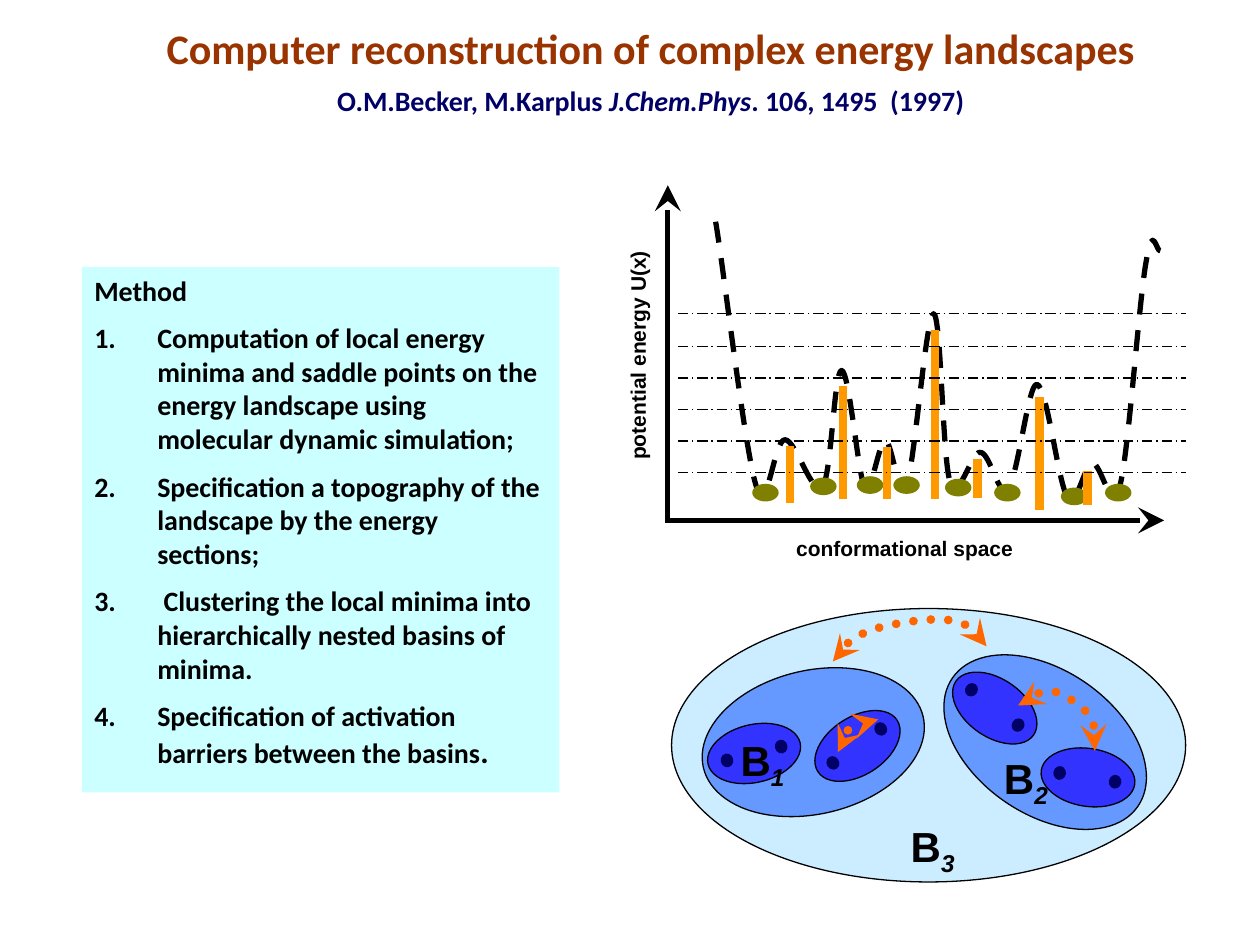
from pptx import Presentation
from pptx.dml.color import RGBColor
from pptx.enum.dml import MSO_LINE
from pptx.enum.shapes import MSO_CONNECTOR, MSO_SHAPE
from pptx.enum.text import MSO_ANCHOR, MSO_AUTO_SIZE, PP_ALIGN
from pptx.oxml.ns import qn
from pptx.util import Pt
from lxml import etree

PX = 9144  # 100 px to the inch
OVAL, RECT = MSO_SHAPE.OVAL, MSO_SHAPE.RECTANGLE
DASH, DOT, DASH_DOT = MSO_LINE.DASH, MSO_LINE.ROUND_DOT, MSO_LINE.LONG_DASH_DOT
LEFT, CENTER = PP_ALIGN.LEFT, PP_ALIGN.CENTER

THEME = {
    "title": "993300", "cite": "000066", "ink": "000000", "panel": "CCFFFF",
    "minimum": "808000", "barrier": "FF9900", "arc": "FF6600",
    "outer": "CCECFF", "basin": "6699FF", "inner": "3333FF", "dot": "000066",
    "sans": "Calibri", "label": "Arial",
    "title_pt": 24, "body_pt": 16, "end_pt": 18, "axis_pt": 12, "basin_pt": 24,
    "thin": 0.75, "axis": 3, "thick": 5,
}

# Content
TITLE = "Computer reconstruction of complex energy landscapes"
CITATION = [("O.M.Becker, M.Karplus ", False), ("J.Chem.Phys", True),
            (". 106, 1495  (1997)", False)]
METHOD = "Method"
STEPS = [
    "Computation of local energy minima and saddle points on the energy "
    "landscape using molecular dynamic simulation;",
    "Specification a topography of the landscape by the energy sections;",
    " Clustering the local minima into hierarchically nested basins of minima.",
    "Specification of activation barriers between the basins",
]
# Curves: a start point, then two control points and an end point per span
ENERGY = [(568, 176), (574, 210), (591, 356), (600, 385), (609, 414), (614, 349),
          (623, 349), (632, 349), (645, 396), (653, 386), (660, 377), (662, 294),
          (668, 294), (674, 294), (681, 376), (686, 386), (692, 395), (697, 350),
          (703, 350), (708, 350), (713, 400), (720, 383), (726, 367), (735, 250),
          (741, 249), (747, 249), (748, 364), (754, 382), (761, 400), (771, 358),
          (778, 359), (786, 359), (793, 397), (800, 388), (808, 379), (816, 304),
          (823, 305), (831, 306), (840, 384), (847, 394), (855, 405), (860, 369),
          (867, 368), (874, 366), (882, 412), (889, 385), (896, 358), (904, 237),
          (910, 206), (915, 175), (918, 201), (921, 199)]
ARCS = [
    [(808, 560), (818, 547), (839, 546), (855, 559), (867, 568), (873, 583), (869, 596)],
    [(661, 525), (664, 512), (688, 499), (718, 494), (751, 489), (783, 496), (783, 513)],
    [(665, 597), (666, 592), (667, 587), (670, 583), (676, 575), (686, 571), (697, 571)],
]
MINIMA = [(597, 384), (643, 379), (680, 378), (709, 378),
          (750, 380), (789, 384), (842, 387), (877, 384)]
BARRIERS = [(627, 354, 399), (669, 306, 396), (704, 355, 396), (742, 262, 396),
            (776, 364, 395), (825, 315, 405), (863, 374, 401)]  # x, top, bottom
SECTIONS = [249, 275, 300, 325, 350, 375]
AXES = [((530, 415), (530, 147)), ((530, 413), (924, 413))]
# Basin: place and turn, then its inner basins, each with its minima
BASINS = [
    ((556, 532), 167, [((561, 575), 167, [(615, 587), (572, 598)]),
                       ((643, 569), 146.9, [(694, 573), (656, 600)])]),
    ((740, 532), 34.8, [((752, 539), 34.8, [(766, 542), (803, 570)]),
                        ((826, 594), 8.7, [(880, 615), (836, 608)])]),
]
BASIN_LABELS = [("1", 578, 578), ("2", 787, 592), ("3", 713, 646)]

prs = Presentation()
prs.slide_width, prs.slide_height = 1000 * PX, 750 * PX
s = prs.slides.add_slide(prs.slide_layouts[5])


def color(name):
    return RGBColor.from_string(THEME[name])


def style_line(sp, name, width, dash=None, ends=(), size="med"):
    sp.line.color.rgb = color(name)
    sp.line.width = Pt(THEME[width])
    if dash:
        sp.line.dash_style = dash
    ln = sp._element.spPr.find(qn("a:ln"))
    if dash == DOT:
        ln.set("cap", "rnd")
    for end in ends:
        etree.SubElement(ln, qn(f"a:{end}"), type="stealth", w=size, len=size)


def add_shape(kind, left, top, w, h, fill, rot=0, outline=False):
    sp = s.shapes.add_shape(kind, left * PX, top * PX, w * PX, h * PX)
    sp.shadow.inherit = False
    sp.rotation = rot
    sp.fill.solid()
    sp.fill.fore_color.rgb = color(fill)
    if outline:
        style_line(sp, "ink", "thin")
    else:
        sp.line.fill.background()
    return sp


def add_line(start, end, *style):
    c = s.shapes.add_connector(MSO_CONNECTOR.STRAIGHT, *(v * PX for v in start + end))
    style_line(c, *style)
    etree.SubElement(c._element.spPr, qn("a:effectLst"))


def add_curve(knots, *style):
    fb = s.shapes.build_freeform(*knots[0], scale=PX)
    fb.add_line_segments(knots[1:], close=False)
    sp = fb.convert_to_shape()
    # Join each three straight segments into one cubic span
    segments = list(sp._element.iter(qn("a:lnTo")))
    for i in range(0, len(segments), 3):
        first, *others = segments[i:i + 3]
        span = etree.Element(qn("a:cubicBezTo"))
        first.addprevious(span)
        for segment in (first, *others):
            span.append(segment[0])
            segment.getparent().remove(segment)
    sp.shadow.inherit = False
    sp.fill.background()
    style_line(sp, *style)


def add_run(p, text, size, name="ink", font="sans", italic=False):
    r = p.add_run()
    r.text = text
    fmt = {"name": THEME[font], "size": Pt(THEME[size]), "bold": True, "italic": italic}
    for key, value in fmt.items():
        setattr(r.font, key, value)
    r.font.color.rgb = color(name)
    return r


def set_indent(p, margin, indent):
    pPr = p._p.get_or_add_pPr()
    pPr.set("marL", str(margin * PX))
    pPr.set("indent", str(indent * PX))
    return pPr


def set_frame(tf, wrap=True):
    fmt = {"word_wrap": wrap, "auto_size": MSO_AUTO_SIZE.NONE,
           "vertical_anchor": MSO_ANCHOR.TOP}
    for key, value in fmt.items():
        setattr(tf, key, value)


def add_label(text, size, left, top, w, h, wrap=True, align=LEFT):
    tb = s.shapes.add_textbox(left * PX, top * PX, w * PX, h * PX)
    set_frame(tb.text_frame, wrap)
    p = tb.text_frame.paragraphs[0]
    p.alignment = align
    add_run(p, text, size, font="label")
    return tb


# Title and citation
title = s.shapes.title
for key, value in {"left": 91, "top": 13, "width": 851, "height": 86}.items():
    setattr(title, key, value * PX)
tf = title.text_frame
set_frame(tf)
p = tf.paragraphs[0]
p.alignment = CENTER
set_indent(p, 0, -16)
add_run(p, TITLE, "title_pt", "title")
p = tf.add_paragraph()
p.alignment, p.space_before = CENTER, Pt(6)
set_indent(p, 0, 0)
for text, italic in CITATION:
    add_run(p, text, "body_pt", "cite", italic=italic)

# Energy profile
add_curve(ENERGY, "ink", "axis", DASH)
for left, top in MINIMA:
    add_shape(OVAL, left, top, 21, 14, "minimum")
for start, end in AXES:
    add_line(start, end, "ink", "axis", None, ["tailEnd"], "lg")
add_label("potential energy U(x)", "axis_pt", 413, 267, 186, 30, False, CENTER).rotation = 270
add_label("conformational space", "axis_pt", 622, 420, 238, 30)
for x, top, bottom in BARRIERS:
    add_line((x, top), (x, bottom), "barrier", "thick")
for y in SECTIONS:
    add_line((538, y), (941, y), "ink", "thin", DASH_DOT)

# Method panel
tf = add_shape(RECT, 65, 212, 379, 417, "panel").text_frame
set_frame(tf)
tf.margin_right = 14 * PX
for i, text in enumerate([METHOD] + STEPS):
    p = tf.add_paragraph() if i else tf.paragraphs[0]
    p.alignment = LEFT
    pPr = set_indent(p, 50, -50)
    if i:
        p.space_before = Pt(8)
        etree.SubElement(pPr, qn("a:buFont"), typeface="+mj-lt")
        etree.SubElement(pPr, qn("a:buAutoNum"), type="arabicPeriod")
    add_run(p, text, "body_pt")
add_run(p, ".", "end_pt")

# Nested basins
add_shape(OVAL, 533, 483, 408, 217, "outer", outline=True)
for place, rot, inner_basins in BASINS:
    add_shape(OVAL, *place, 179, 114, "basin", rot, True)
    for inner, turn, dots in inner_basins:
        add_shape(OVAL, *inner, 75, 46, "inner", turn, True)
        for dot in dots:
            add_shape(OVAL, *dot, 10, 11, "dot", turn)
for index, left, top in BASIN_LABELS:
    p = add_label("B", "basin_pt", left, top, 57, 50, False).text_frame.paragraphs[0]
    r = add_run(p, index, "basin_pt", font="label", italic=True)
    r._r.get_or_add_rPr().set("baseline", "-25000")
for arc in ARCS:
    add_curve(arc, "arc", "thick", DOT, ["headEnd", "tailEnd"])

prs.save("out.pptx")
